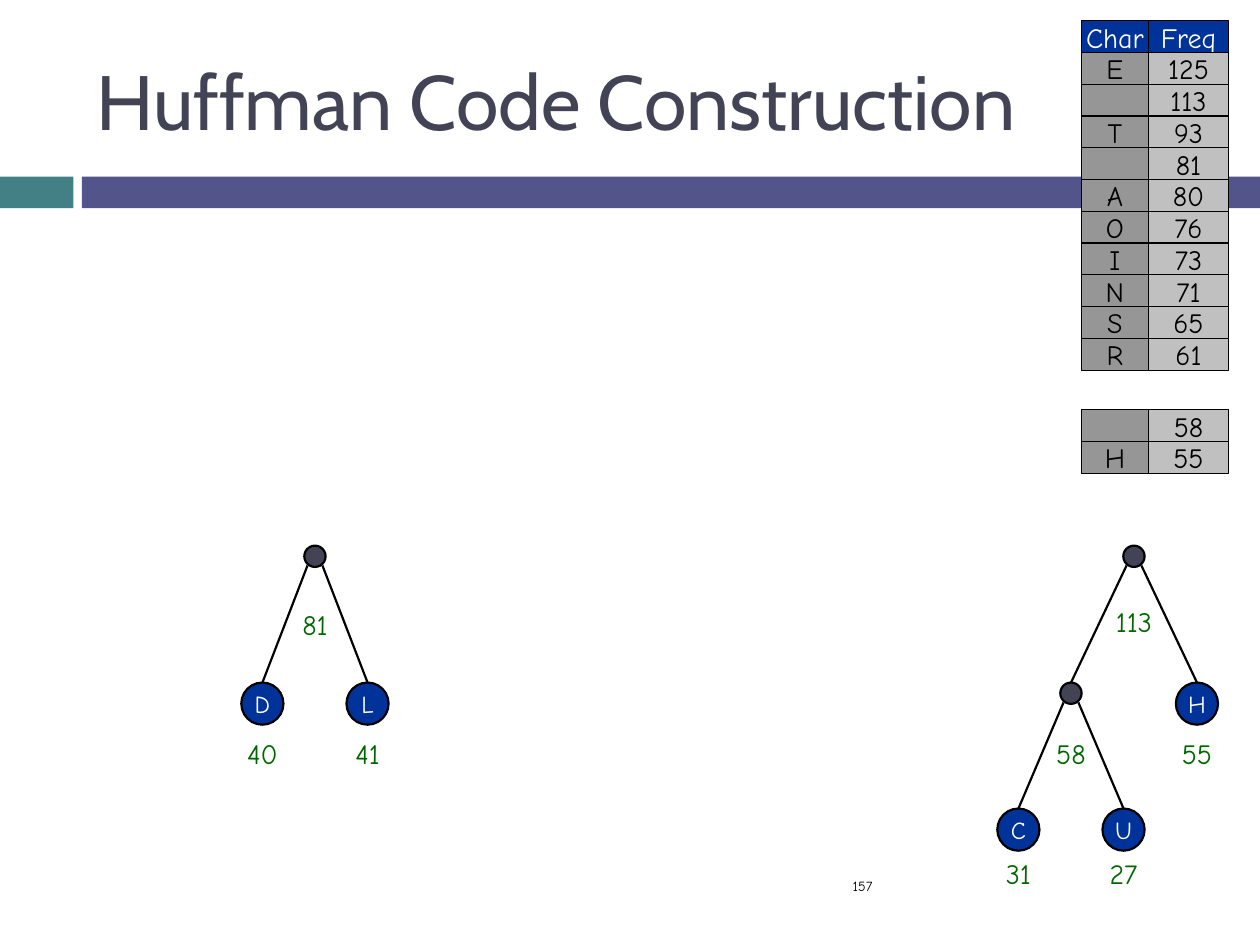
from dataclasses import dataclass

from lxml import etree
from pptx import Presentation
from pptx.dml.color import RGBColor
from pptx.enum.shapes import MSO_CONNECTOR, MSO_SHAPE
from pptx.enum.text import MSO_ANCHOR, PP_ALIGN
from pptx.oxml.ns import qn
from pptx.util import Cm, Pt

OVAL = MSO_SHAPE.OVAL
RECTANGLE = MSO_SHAPE.RECTANGLE
STRAIGHT = MSO_CONNECTOR.STRAIGHT
LEFT, CENTER = PP_ALIGN.LEFT, PP_ALIGN.CENTER
TOP, MIDDLE = MSO_ANCHOR.TOP, MSO_ANCHOR.MIDDLE

BODY_FONT, TITLE_FONT = "Comic Neue", "Cabin"
BLACK, WHITE = "000000", "FFFFFF"
BLUE, SLATE, GREEN = "003399", "424456", "006600"
DARK_GRAY, LIGHT_GRAY = "969696", "C0C0C0"

LEAF_SIZE, JOINT_SIZE = 0.85, 0.43
ROW_PITCH, CELL_HEIGHT = 0.64, 0.65


@dataclass(frozen=True)
class Node:
    center: float
    top: float
    weight: int
    weight_top: float
    letter: str = ""
    children: tuple["Node", ...] = ()

    @property
    def size(self) -> float:
        return JOINT_SIZE if self.children else LEAF_SIZE


@dataclass(frozen=True)
class Column:
    left: float
    width: float
    fill: str


@dataclass(frozen=True)
class FrequencyGrid:
    top: float
    rows: tuple[tuple[str, str], ...]
    has_header: bool = False


BARS = (Column(0, 1.48, "438086"), Column(1.65, 23.75, "53548A"))
GRID_COLUMNS = (Column(21.8, 1.35, DARK_GRAY), Column(23.15, 1.62, LIGHT_GRAY))

GRIDS = (
    FrequencyGrid(0.42, (
        ("Char", "Freq"), ("E", "125"), ("", "113"), ("T", "93"),
        ("", "81"), ("A", "80"), ("O", "76"), ("I", "73"),
        ("N", "71"), ("S", "65"), ("R", "61"),
    ), has_header=True),
    FrequencyGrid(8.26, (("", "58"), ("H", "55"))),
)

TREES = (
    Node(6.35, 11, 81, 12.12, children=(
        Node(5.29, 13.76, 40, 14.73, "D"),
        Node(7.41, 13.76, 41, 14.73, "L"),
    )),
    Node(22.86, 11, 113, 12.07, children=(
        Node(21.59, 13.76, 58, 14.73, children=(
            Node(20.53, 16.3, 31, 17.15, "C"),
            Node(22.65, 16.3, 27, 17.15, "U"),
        )),
        Node(24.13, 13.76, 55, 14.73, "H"),
    )),
)


def color(value: str) -> RGBColor:
    return RGBColor.from_string(value)


def write(frame, text: str, size: int, ink: str, align=CENTER,
          anchor=MIDDLE, font: str = BODY_FONT) -> None:
    frame.text = text
    frame.vertical_anchor = anchor
    para = frame.paragraphs[0]
    para.alignment = align
    for span in para.runs:
        span.font.name = font
        span.font.size = Pt(size)
        span.font.color.rgb = color(ink)


def draw_text(page, left: float, top: float, width: float, height: float,
              text: str, size: int, ink: str, align=CENTER, anchor=TOP) -> None:
    box = page.shapes.add_textbox(Cm(left), Cm(top), Cm(width), Cm(height))
    box.text_frame.word_wrap = True
    write(box.text_frame, text, size, ink, align, anchor)


def draw_shape(page, kind, left: float, top: float, width: float, height: float,
               fill: str, line_width: float = 0, text: str = "",
               size: int = 16, ink: str = BLACK) -> None:
    shape = page.shapes.add_shape(kind, Cm(left), Cm(top), Cm(width), Cm(height))
    shape.shadow.inherit = False
    shape.fill.solid()
    shape.fill.fore_color.rgb = color(fill)
    if line_width:
        shape.line.color.rgb = color(BLACK)
        shape.line.width = Pt(line_width)
    else:
        shape.line.fill.background()
    if text:
        shape.text_frame.word_wrap = False
        write(shape.text_frame, text, size, ink)


def draw_edge(page, parent: Node, child: Node) -> None:
    side = 0.15 if child.center > parent.center else -0.15
    edge = page.shapes.add_connector(
        STRAIGHT, Cm(parent.center + side), Cm(parent.top + 0.4),
        Cm(child.center), Cm(child.top))
    edge.line.color.rgb = color(BLACK)
    edge.line.width = Pt(1.25)
    etree.SubElement(edge._element.spPr, qn("a:effectLst"))


def draw_tree(page, node: Node) -> None:
    for child in node.children:
        draw_edge(page, node, child)
        draw_tree(page, child)
    draw_shape(page, OVAL, node.center - node.size / 2, node.top, node.size, node.size,
               SLATE if node.children else BLUE, 1.25, node.letter, 14, WHITE)
    draw_text(page, node.center - 0.85, node.weight_top, 1.7, 0.94, str(node.weight), 16, GREEN)


def draw_grid(page, grid: FrequencyGrid) -> None:
    for row_index, values in enumerate(grid.rows):
        is_header = grid.has_header and row_index == 0
        top = grid.top + row_index * ROW_PITCH
        for column, value in zip(GRID_COLUMNS, values):
            draw_shape(page, RECTANGLE, column.left, top, column.width, CELL_HEIGHT,
                       BLUE if is_header else column.fill, 0.75, value,
                       ink=WHITE if is_header else BLACK)


def main() -> None:
    deck = Presentation()
    deck.slide_width, deck.slide_height = Cm(25.4), Cm(19.05)
    page = deck.slides.add_slide(deck.slide_layouts[5])
    for bar in BARS:
        draw_shape(page, RECTANGLE, bar.left, 3.56, bar.width, 0.64, bar.fill)
    title = page.shapes.title
    title.left, title.top, title.width, title.height = Cm(1.7), Cm(0.64), Cm(22.66), Cm(2.75)
    write(title.text_frame, "Huffman Code Construction", 44, SLATE, LEFT, font=TITLE_FONT)
    draw_text(page, 16.94, 17.35, 7.42, 1.02, "157", 8, BLACK, LEFT, MIDDLE)
    for tree in TREES:
        draw_tree(page, tree)
    for grid in GRIDS:
        draw_grid(page, grid)
    deck.save("out.pptx")


if __name__ == "__main__":
    main()
